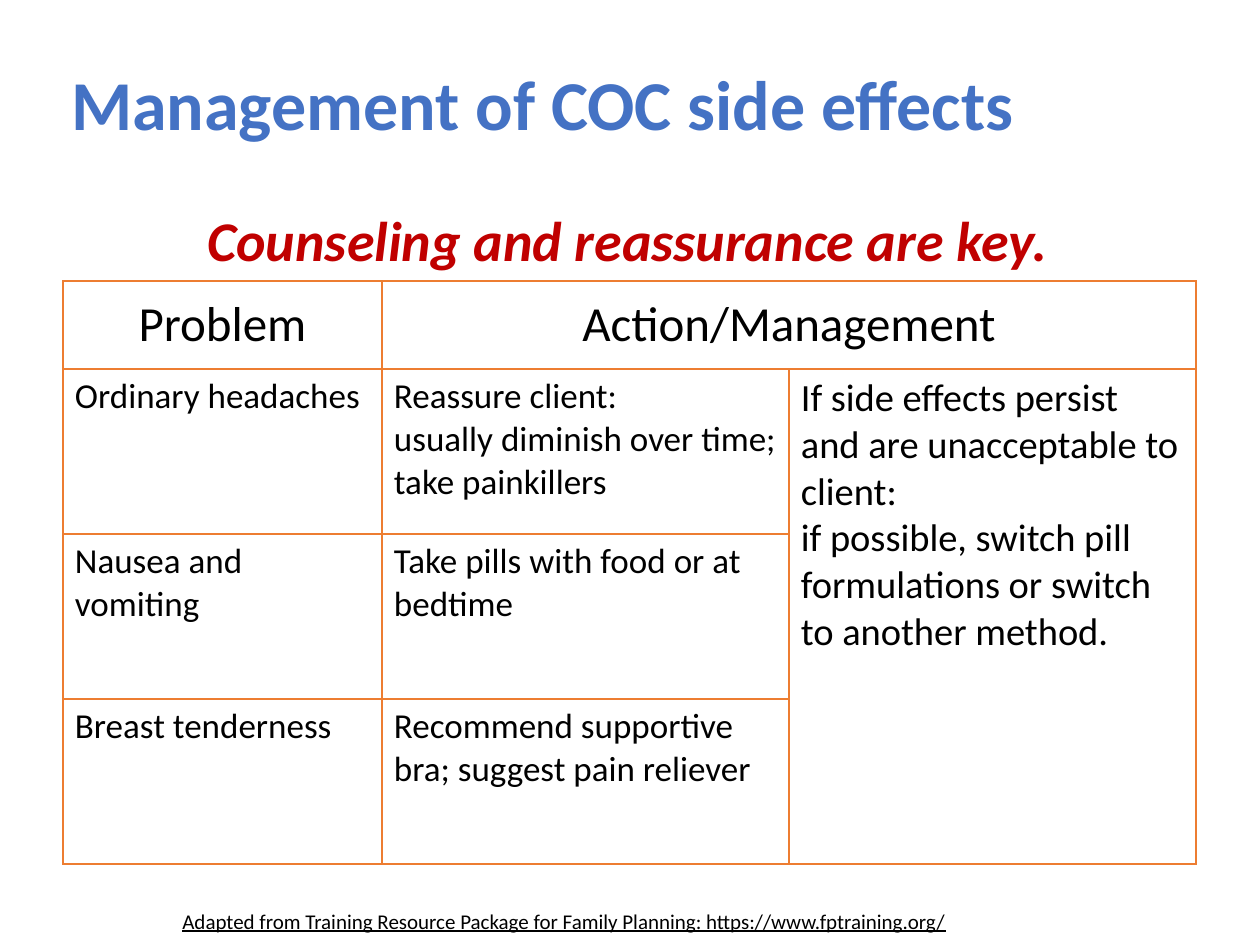
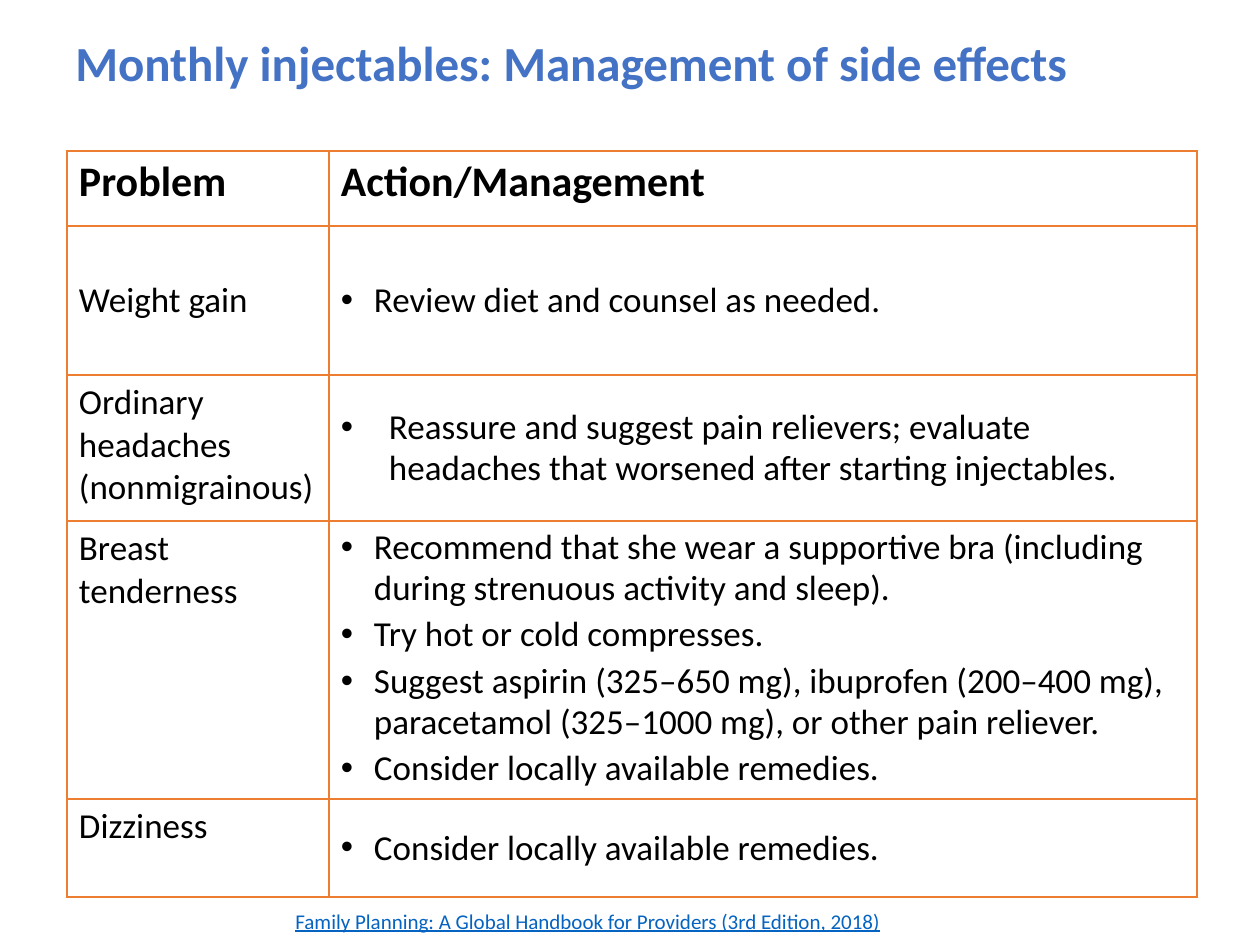
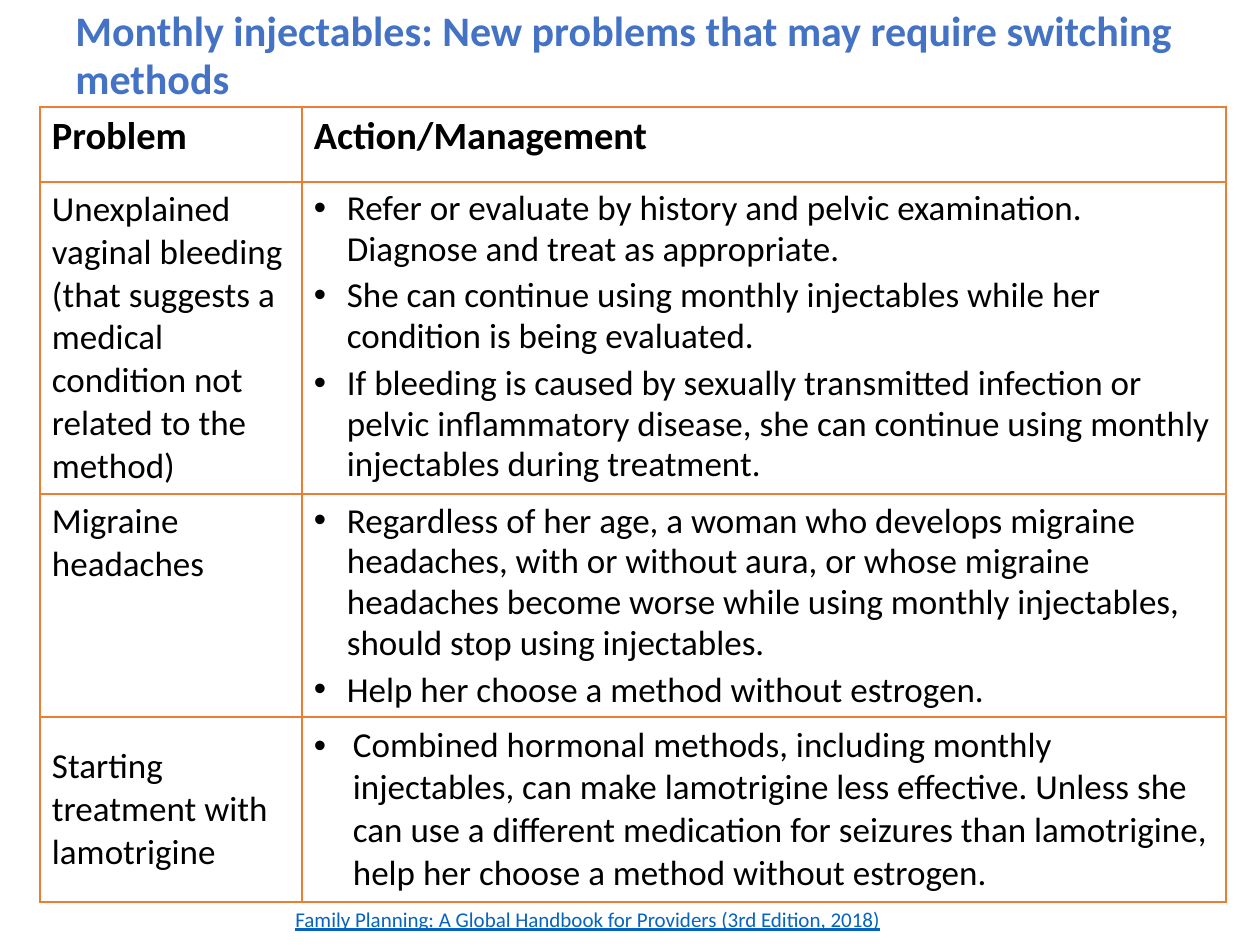
from dataclasses import dataclass

from pptx import Presentation
from pptx.dml.color import RGBColor
from pptx.enum.text import MSO_ANCHOR, PP_ALIGN
from pptx.oxml.ns import qn
from pptx.util import Emu, Pt
from lxml.etree import SubElement

COLORS = {
    "title": "4472C4",
    "text": "000000",
    "key": "C00000",
    "link": "0563C1",
    "border": "ED7D31",
}
FONT = "Calibri"
EMU_PER_PX = 914400 / 126
TIGHT = 0.95
BULLET_GAP = 3.4
BODY_SIZE = 20
TOP, MIDDLE = MSO_ANCHOR.TOP, MSO_ANCHOR.MIDDLE


@dataclass
class Entry:
    """Content of one table cell; hang is the hanging indent of its bullets."""
    paragraphs: tuple
    size: int = BODY_SIZE
    bold: bool = False
    anchor: MSO_ANCHOR = TOP
    align: PP_ALIGN = PP_ALIGN.LEFT
    hang: int = 0
    spacing: float = 1


def note(text, **options):
    return Entry((text,), **options)


def bullets(*texts, hang=33, spacing=TIGHT, anchor=TOP):
    return Entry(texts, hang=hang, spacing=spacing, anchor=anchor)


def header(size, **options):
    return [note(text, size=size, **options) for text in ("Problem", "Action/Management")]


HANDBOOK = "Family Planning: A Global Handbook for Providers (3rd Edition, 2018)"

SLIDES = [
    {
        "title": ("Management of COC side effects", 40, (59, 28, 1134, 158)),
        "key_message": ("Counseling and reassurance are key.", (63, 204, 1130, 69)),
        "source": ("Adapted from Training Resource Package for Family Planning: "
                   "https://www.fptraining.org/", "text", (170, 902, 874, 34)),
        "table_at": (63, 281),
        "columns": (319, 407, 407),
        "rows": (88, 165, 165, 165),
        "right_margin": 12,
        "merges": [((0, 1), (0, 2)), ((1, 2), (3, 2))],
        "cells": [
            header(28, anchor=MIDDLE, align=PP_ALIGN.CENTER),
            [note("Ordinary headaches"),
             note("Reassure client: \nusually diminish over time; take painkillers"),
             Entry(("If side effects persist and are unacceptable to client:",
                    "if possible, switch pill formulations or switch to another method."),
                   size=22)],
            [note("Nausea and vomiting"), note("Take pills with food or at bedtime")],
            [note("Breast tenderness"),
             note("Recommend supportive bra; suggest pain reliever")],
        ],
    },
    {
        "title": ("Monthly injectables: Management of side effects", 28, (63, 40, 1134, 49)),
        "source": (HANDBOOK, "link", (283, 902, 713, 30)),
        "table_at": (67, 151),
        "columns": (262, 868),
        "rows": (75, 149, 146, 278, 98),
        "right_margin": 6,
        "cells": [
            header(24, bold=True),
            [note("Weight gain", anchor=MIDDLE),
             bullets("Review diet and counsel as needed.", anchor=MIDDLE)],
            [note("Ordinary headaches (nonmigrainous)"),
             bullets("Reassure and suggest pain relievers; evaluate headaches that "
                     "worsened after starting injectables.", hang=48, anchor=MIDDLE)],
            [note("Breast tenderness"),
             bullets("Recommend that she wear a supportive bra (including during "
                     "strenuous activity and sleep).",
                     "Try hot or cold compresses.",
                     "Suggest aspirin (325–650 mg), ibuprofen (200–400 mg), "
                     "paracetamol (325–1000 mg), or other pain reliever.",
                     "Consider locally available remedies.")],
            [note("Dizziness"),
             bullets("Consider locally available remedies.", anchor=MIDDLE)],
        ],
    },
    {
        "title": ("Monthly injectables: New problems that may require switching methods",
                  24, (63, 20, 1134, 73)),
        "source": (HANDBOOK, "link", (283, 900, 713, 30)),
        "table_at": (40, 107),
        "columns": (262, 924),
        "rows": (75, 312, 223, 185),
        "right_margin": 6,
        "cells": [
            header(22, bold=True),
            [note("Unexplained vaginal bleeding (that suggests a medical condition "
                  "not related to the method)"),
             bullets("Refer or evaluate by history and pelvic examination. Diagnose "
                     "and treat as appropriate.",
                     "She can continue using monthly injectables while her condition "
                     "is being evaluated.",
                     "If bleeding is caused by sexually transmitted infection or pelvic "
                     "inflammatory disease, she can continue using monthly injectables "
                     "during treatment.")],
            [note("Migraine headaches"),
             bullets("Regardless of her age, a woman who develops migraine headaches, "
                     "with or without aura, or whose migraine headaches become worse "
                     "while using monthly injectables, should stop using injectables.",
                     "Help her choose a method without estrogen.", anchor=MIDDLE)],
            [note("Starting treatment with lamotrigine", anchor=MIDDLE),
             bullets("Combined hormonal methods, including monthly injectables, can make "
                     "lamotrigine less effective. Unless she can use a different "
                     "medication for seizures than lamotrigine, help her choose a method "
                     "without estrogen.", hang=39, spacing=1, anchor=MIDDLE)],
        ],
    },
]


def px(length):
    return Emu(round(length * EMU_PER_PX))


def add_text(paragraph, text, size, color="text", bold=False, italic=False, underline=False):
    for index, line in enumerate(text.split("\n")):
        if index:
            paragraph.add_line_break()
        run = paragraph.add_run()
        run.text = line
        font = run.font
        font.name, font.size = FONT, Pt(size)
        font.bold, font.italic, font.underline = bold, italic, underline
        font.color.rgb = RGBColor.from_string(COLORS[color])


def add_text_box(slide, box, text, size, anchor=TOP, align=PP_ALIGN.LEFT, spacing=1, **style):
    frame = slide.shapes.add_textbox(*map(px, box)).text_frame
    frame.word_wrap = True
    frame.vertical_anchor = anchor
    paragraph = frame.paragraphs[0]
    paragraph.alignment = align
    paragraph.line_spacing = spacing
    add_text(paragraph, text, size, **style)


def add_bullet(paragraph, hang):
    properties = paragraph._p.get_or_add_pPr()
    properties.set("marL", str(px(hang)))
    properties.set("indent", str(-px(hang)))
    SubElement(properties, qn("a:buFont"), typeface="Arial")
    SubElement(properties, qn("a:buChar"), char="•")


def draw_borders(cell):
    properties = cell._tc.get_or_add_tcPr()
    for side in ("a:lnL", "a:lnR", "a:lnT", "a:lnB"):
        line = SubElement(properties, qn(side), w=str(Pt(1)))
        fill = SubElement(line, qn("a:solidFill"))
        SubElement(fill, qn("a:srgbClr"), val=COLORS["border"])


def fill_cell(cell, entry):
    cell.vertical_anchor = entry.anchor
    frame = cell.text_frame
    for index, text in enumerate(entry.paragraphs):
        paragraph = frame.add_paragraph() if index else frame.paragraphs[0]
        paragraph.alignment = entry.align
        paragraph.line_spacing = entry.spacing
        if entry.hang:
            paragraph.space_before = Pt(BULLET_GAP if index else 0)
            add_bullet(paragraph, entry.hang)
        add_text(paragraph, text, entry.size, bold=entry.bold)


def add_problem_table(slide, content):
    columns, rows = content["columns"], content["rows"]
    box = (*content["table_at"], sum(columns), sum(rows))
    table = slide.shapes.add_table(len(rows), len(columns), *map(px, box)).table
    table.first_row = table.horz_banding = False
    for column, width in zip(table.columns, columns):
        column.width = px(width)
    for row, height in zip(table.rows, rows):
        row.height = px(height)
    for cell in table.iter_cells():
        draw_borders(cell)
        cell.fill.background()
        cell.margin_left = px(12)
        cell.margin_right = px(content["right_margin"])
        cell.margin_top = cell.margin_bottom = px(6)
    for first, last in content.get("merges", []):
        table.cell(*first).merge(table.cell(*last))
    for row_index, entries in enumerate(content["cells"]):
        for column_index, entry in enumerate(entries):
            fill_cell(table.cell(row_index, column_index), entry)


def build_slide(presentation, content):
    slide = presentation.slides.add_slide(presentation.slide_layouts[6])
    title, size, box = content["title"]
    add_text_box(slide, box, title, size, anchor=MIDDLE, spacing=TIGHT, color="title", bold=True)
    add_problem_table(slide, content)
    if "key_message" in content:
        message, box = content["key_message"]
        add_text_box(slide, box, message, 32, align=PP_ALIGN.CENTER, spacing=TIGHT,
                     color="key", bold=True, italic=True)
    source, color, box = content["source"]
    add_text_box(slide, box, source, 12, color=color, underline=True)


def main():
    presentation = Presentation()
    presentation.slide_width, presentation.slide_height = px(1260), px(945)
    for content in SLIDES:
        build_slide(presentation, content)
    presentation.save("out.pptx")


if __name__ == "__main__":
    main()
